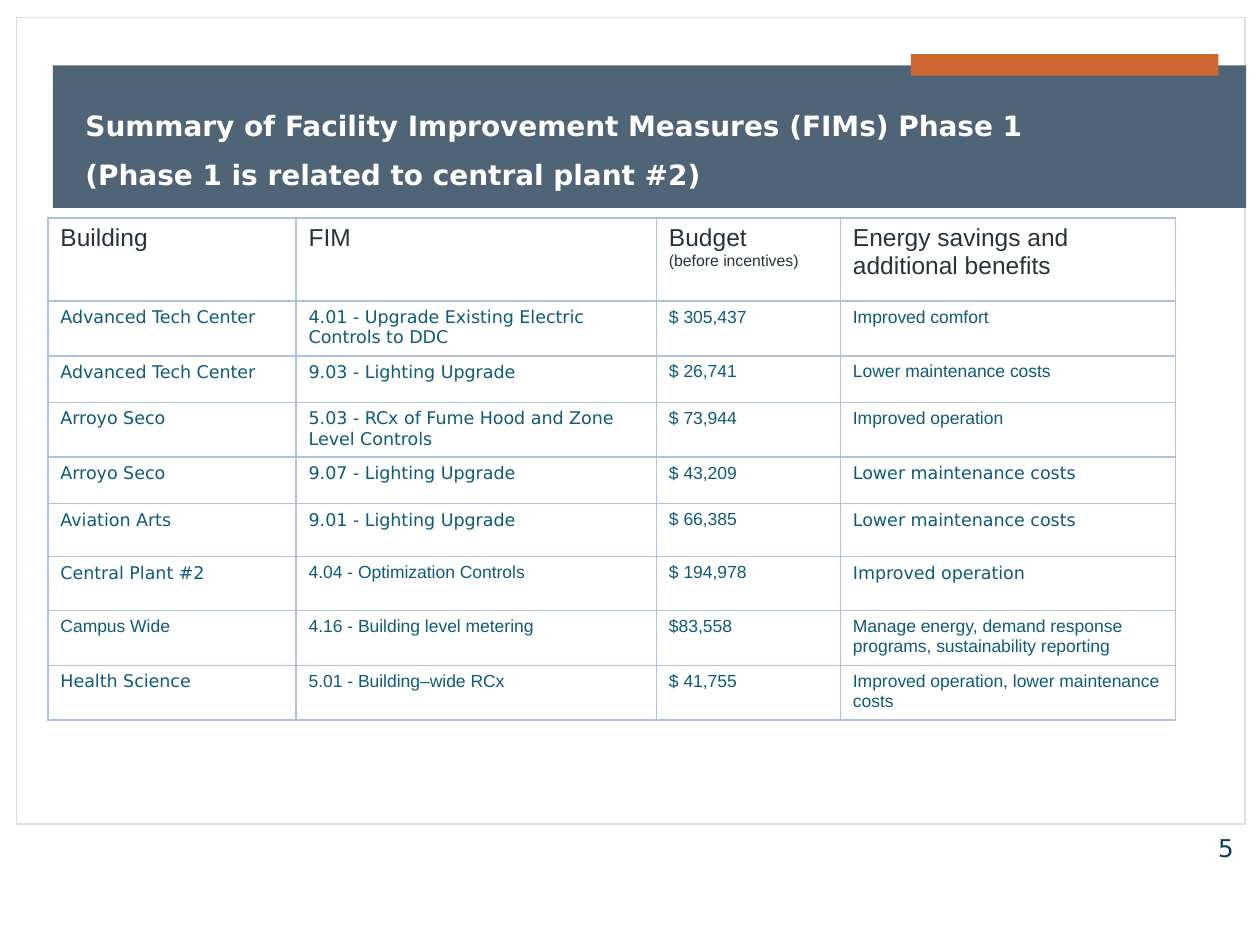
import pptx
import pptx.dml.color
import pptx.enum.shapes
import pptx.enum.text
import pptx.oxml
import pptx.oxml.ns
import pptx.util
from pptx.util import Inches

ARIAL, DEJAVU = "Arial", "DejaVu Sans"
BORDER, HEADER_INK, BODY_INK = "ACC2DF", "28323B", "0E5B79"

COLUMN_WIDTHS = [1.97, 2.86, 1.46, 2.66]
ROW_HEIGHTS = [0.66, 0.43, 0.37, 0.42, 0.37, 0.42, 0.43, 0.41, 0.41]
HEADERS = ["Building", "FIM", "Budget\n(before incentives)",
           "Energy savings and additional benefits"]

# Each measure ends with one font letter per column: D for DejaVu Sans, A for Arial.
FONTS = {"D": DEJAVU, "A": ARIAL}
MEASURES = [
    ("Advanced Tech Center", "4.01 - Upgrade Existing Electric Controls to DDC",
     "$ 305,437", "Improved comfort", "DDAA"),
    ("Advanced Tech Center", "9.03 - Lighting Upgrade",
     "$ 26,741", "Lower maintenance costs", "DDAA"),
    ("Arroyo Seco", "5.03 - RCx of Fume Hood and Zone Level Controls",
     "$ 73,944", "Improved operation", "DDAA"),
    ("Arroyo Seco", "9.07 - Lighting Upgrade",
     "$ 43,209", "Lower maintenance costs", "DDAD"),
    ("Aviation Arts", "9.01 - Lighting Upgrade",
     "$ 66,385", "Lower maintenance costs", "DDAD"),
    ("Central Plant #2", "4.04 - Optimization Controls",
     "$ 194,978", "Improved operation", "DAAD"),
    ("Campus Wide", "4.16 - Building level metering", "$83,558",
     "Manage energy, demand response programs, sustainability reporting", "AAAA"),
    ("Health Science", "5.01 - Building–wide RCx", "$ 41,755",
     "Improved operation, lower maintenance costs", "DAAA"),
]


def color(hex_code):
    return pptx.dml.color.RGBColor.from_string(hex_code)


def style_paragraph(para, size, font, ink, bold=False):
    for span in para.runs:
        span.font.size = pptx.util.Pt(size)
        span.font.name = font
        span.font.bold = bold
        span.font.color.rgb = color(ink)


def add_panel(page, left, top, width, height, fill, line=None):
    panel = page.shapes.add_shape(
        pptx.enum.shapes.MSO_SHAPE.RECTANGLE,
        Inches(left), Inches(top), Inches(width), Inches(height))
    panel.shadow.inherit = False
    panel.fill.solid()
    panel.fill.fore_color.rgb = color(fill)
    if line:
        panel.line.color.rgb = color(line)
        panel.line.width = pptx.util.Pt(1)
    else:
        panel.line.fill.background()


def add_text(page, left, top, width, height, text, size, ink, bold=False):
    """Add a wrapped text box and return its frame."""
    box = page.shapes.add_textbox(
        Inches(left), Inches(top), Inches(width), Inches(height))
    frame = box.text_frame
    frame.word_wrap = True
    frame.text = text
    for para in frame.paragraphs:
        style_paragraph(para, size, DEJAVU, ink, bold)
    return frame


def set_borders(cell):
    properties = cell._tc.get_or_add_tcPr()
    for index, side in enumerate(("lnL", "lnR", "lnT", "lnB")):
        properties.insert(index, pptx.oxml.parse_xml(
            f'<a:{side} {pptx.oxml.ns.nsdecls("a")} w="12700"><a:solidFill>'
            f'<a:srgbClr val="{BORDER}"/></a:solidFill></a:{side}>'))


def fill_cell(cell, text, size, font, ink):
    cell.text = text
    cell.fill.background()
    set_borders(cell)
    for para in cell.text_frame.paragraphs:
        style_paragraph(para, size, font, ink)


def add_measures_table(page):
    frame = page.shapes.add_table(
        len(ROW_HEIGHTS), len(COLUMN_WIDTHS), Inches(0.38), Inches(1.73),
        Inches(sum(COLUMN_WIDTHS)), Inches(sum(ROW_HEIGHTS)))
    table = frame.table
    table.first_row = False
    table.horz_banding = False
    for column, width in zip(table.columns, COLUMN_WIDTHS):
        column.width = Inches(width)
    for row, height in zip(table.rows, ROW_HEIGHTS):
        row.height = Inches(height)

    for column, header in enumerate(HEADERS):
        fill_cell(table.cell(0, column), header, 14, ARIAL, HEADER_INK)
    budget_note = table.cell(0, 2).text_frame.paragraphs[1]
    style_paragraph(budget_note, 9, ARIAL, HEADER_INK)

    for row, (*texts, letters) in enumerate(MEASURES, start=1):
        for column, (text, letter) in enumerate(zip(texts, letters)):
            fill_cell(table.cell(row, column), text, 10, FONTS[letter], BODY_INK)


def main():
    deck = pptx.Presentation()
    deck.slide_width, deck.slide_height = Inches(10), Inches(7.5)
    page = deck.slides.add_slide(deck.slide_layouts[6])

    add_panel(page, 0.13, 0.14, 9.75, 6.4, "FFFFFF", line="DDDDDD")
    add_panel(page, 0.42, 0.52, 9.47, 1.13, "4F6476")
    add_panel(page, 7.23, 0.43, 2.44, 0.17, "CF6733")

    title = add_text(
        page, 0.58, 0.56, 9, 1.01,
        "Summary of Facility Improvement Measures (FIMs) Phase 1\v"
        "(Phase 1 is related to central plant #2)", 16, "FFFFFF", bold=True)
    title.vertical_anchor = pptx.enum.text.MSO_ANCHOR.BOTTOM
    title.paragraphs[0].line_spacing = pptx.util.Pt(28)

    add_measures_table(page)

    number = add_text(page, 8.95, 6.56, 0.94, 0.34, "5", 14, "0A3F54")
    number.paragraphs[0].alignment = pptx.enum.text.PP_ALIGN.RIGHT

    deck.save("out.pptx")


if __name__ == "__main__":
    main()
